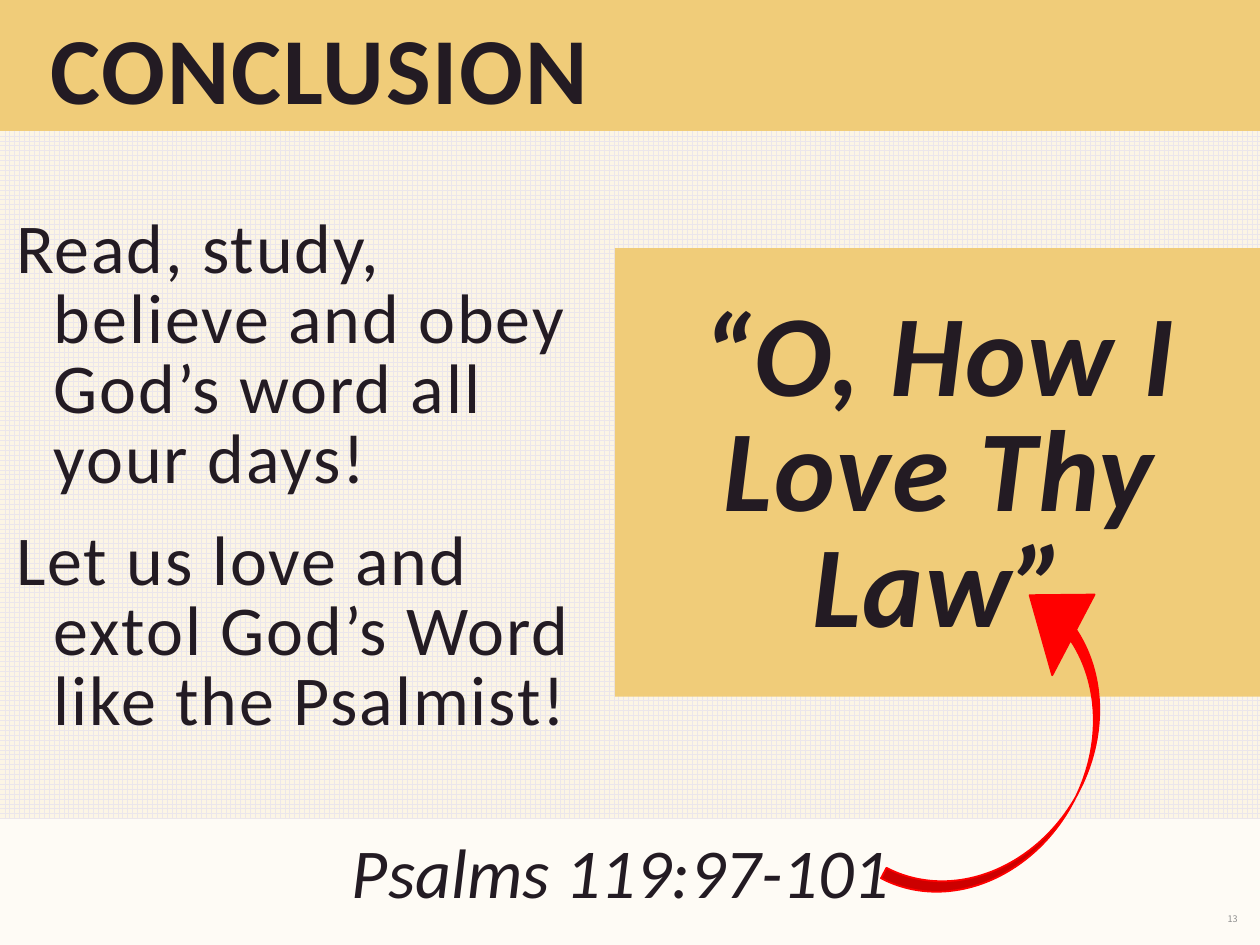
from pptx import Presentation
from pptx.dml.color import RGBColor
from pptx.enum.dml import MSO_PATTERN
from pptx.enum.shapes import MSO_SHAPE as Shape
from pptx.enum.text import MSO_ANCHOR as Anchor, MSO_AUTO_SIZE as AutoSize, PP_ALIGN as Align
from pptx.util import Inches, Pt

COLORS = {
    "page": "FEFBF5",
    "cream": "FCF5E5",
    "grid": "EBE6EB",
    "gold": "F0CC79",
    "ink": "231B23",
    "number": "8D8D8D",
    "arrow": "FF0000",
}


def color(name):
    return RGBColor.from_string(COLORS[name])


def place(shape, box):
    shape.left, shape.top, shape.width, shape.height = map(Inches, box)


def add_panel(slide, kind, box):
    panel = slide.shapes.add_shape(kind, *map(Inches, box))
    panel.shadow.inherit = False
    panel.line.fill.background()
    return panel


def fill_solid(shape, name):
    shape.fill.solid()
    shape.fill.fore_color.rgb = color(name)


def write(paragraph, wording, size, align=Align.LEFT, bold=False, italic=False,
          spacing=0, font="Calibri", ink="ink", margin=0, indent=0):
    paragraph.alignment = align
    properties = paragraph._p.get_or_add_pPr()
    properties.set("marL", str(Inches(margin)))
    properties.set("indent", str(Inches(indent)))
    run = paragraph.add_run()
    run.text = wording
    run.font.size = Pt(size)
    run.font.name = font
    run.font.bold = bold
    run.font.italic = italic
    run.font.color.rgb = color(ink)
    if spacing:
        run.font._element.set("spc", str(int(spacing * 100)))


def add_text_frame(slide, box, anchor=Anchor.TOP):
    frame = slide.shapes.add_textbox(*map(Inches, box)).text_frame
    frame.word_wrap = True
    frame.auto_size = AutoSize.NONE
    frame.vertical_anchor = anchor
    return frame


def add_title(slide, wording):
    title = slide.shapes.title
    place(title, (0, 0, 10, 1.04))
    fill_solid(title, "gold")
    frame = title.text_frame
    frame.auto_size = AutoSize.NONE
    frame.vertical_anchor = Anchor.BOTTOM
    heading = frame.paragraphs[0]
    heading.line_spacing = 0.9
    write(heading, wording, 54, bold=True, spacing=1.1, margin=0.3)


def add_exhortations(slide, exhortations):
    frame = add_text_frame(slide, (-0.07, 1.68, 5, 4.47))
    for index, wording in enumerate(exhortations):
        paragraph = frame.add_paragraph() if index else frame.paragraphs[0]
        paragraph.line_spacing = Pt(40)
        paragraph.space_before = Pt(18)
        write(paragraph, wording, 40, spacing=1.1, margin=0.4, indent=-0.3)


def add_arrow(slide):
    arrow = add_panel(slide, Shape.CURVED_UP_ARROW, (6.69, 5.4, 2.9, 1.07))
    arrow.rotation = 297.7
    for index, value in enumerate((0.088, 0.677, 0.425)):
        arrow.adjustments[index] = value
    fill_solid(arrow, "arrow")
    arrow.line.color.rgb = color("arrow")
    arrow.line.width = Pt(1)


def main():
    deck = Presentation()
    deck.slide_width, deck.slide_height = Inches(10), Inches(7.5)
    slide = deck.slides.add_slide(deck.slide_layouts[5])
    fill_solid(slide.background, "page")

    grid = add_panel(slide, Shape.RECTANGLE, (0, 1.04, 10, 5.46))
    grid.fill.patterned()
    grid.fill.pattern = MSO_PATTERN.LARGE_GRID
    grid.fill.fore_color.rgb = color("grid")
    grid.fill.back_color.rgb = color("cream")
    fill_solid(add_panel(slide, Shape.RECTANGLE, (4.88, 1.97, 5.12, 3.56)), "gold")

    add_title(slide, "CONCLUSION")
    add_exhortations(slide, (
        "Read, study, believe and obey God’s word all your days!",
        "Let us love and extol God’s Word like the Psalmist!",
    ))

    page_number = add_text_frame(slide, (7.67, 7.17, 2.25, 0.25), Anchor.MIDDLE)
    write(page_number.paragraphs[0], "13", 5.2, Align.RIGHT,
          font="Noto Sans CJK JP", ink="number")

    quote = add_text_frame(slide, (4.96, 2.48, 5, 2.61), Anchor.MIDDLE).paragraphs[0]
    quote.line_spacing = Pt(66)
    write(quote, "“O, How I Love Thy Law”", 66, Align.CENTER,
          bold=True, italic=True, spacing=1.1)

    reference = add_text_frame(slide, (2.23, 6.53, 5.39, 0.77))
    reference.auto_size = AutoSize.SHAPE_TO_FIT_TEXT
    write(reference.paragraphs[0], "Psalms 119:97-101", 40, Align.CENTER, italic=True)

    add_arrow(slide)
    deck.save("out.pptx")


if __name__ == "__main__":
    main()
